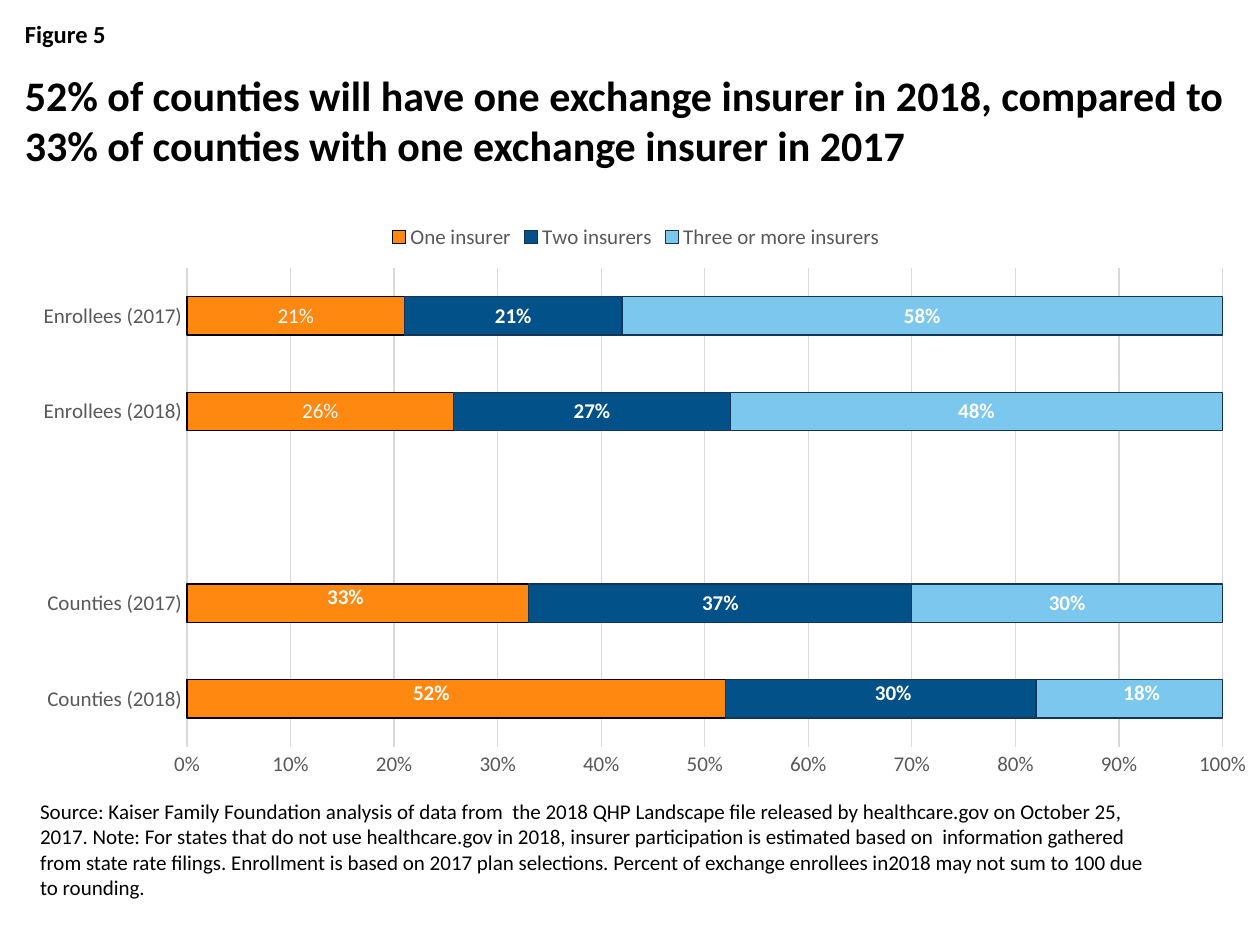
import pptx
import pptx.util
import pptx.chart.data
import pptx.dml.color
import pptx.enum.chart
import pptx.enum.text
import pptx.oxml

Cm, Pt = pptx.util.Cm, pptx.util.Pt
Color = pptx.dml.color.RGBColor
Anchor = pptx.enum.text.MSO_ANCHOR
Enum = pptx.enum.chart

BLACK = Color(0x00, 0x00, 0x00)
WHITE = Color(0xFF, 0xFF, 0xFF)
GRAY = Color(0x59, 0x59, 0x59)
GRID = Color(0xD9, 0xD9, 0xD9)
NAVY = Color(0x13, 0x35, 0x59)
ORANGE = Color(0xFF, 0x88, 0x11)
BLUE = Color(0x02, 0x51, 0x89)
SKY = Color(0x7B, 0xC7, 0xED)
FACE = "Calibri"

LABEL = "Figure 5"
TITLE = ("52% of counties will have one exchange insurer in 2018, compared to "
         "33% of counties with one exchange insurer in 2017")
SOURCE = ("Source: Kaiser Family Foundation analysis of data from  the 2018 QHP Landscape file "
          "released by healthcare.gov on October 25, 2017. Note: For states that do not use "
          "healthcare.gov in 2018, insurer participation is estimated based on  information "
          "gathered from state rate filings. Enrollment is based on 2017 plan selections. "
          "Percent of exchange enrollees in2018 may not sum to 100 due to rounding.")
GROUPS = ["Counties (2018)", "Counties (2017)", "", "Enrollees (2018)", "Enrollees (2017)"]
SERIES = [
    ("One insurer", [0.52, 0.33, None, 0.26, 0.21], ORANGE, BLACK),
    ("Two insurers", [0.30, 0.37, None, 0.27, 0.21], BLUE, NAVY),
    ("Three or more insurers", [0.18, 0.30, None, 0.48, 0.58], SKY, NAVY),
]
LIGHT = [(0, 3), (0, 4)]
SHIFTS = {(0, 0): (-0.02, -0.01), (0, 1): (-0.01, -0.01),
          (1, 0): (0.01, -0.01), (2, 0): (0.01, -0.01)}
PLOT = {"x": 0.14, "y": 0.1, "w": 0.83, "h": 0.83}


def style(font, size=12, color=GRAY, bold=False):
    font.name, font.size, font.bold = FACE, Pt(size), bold
    font.color.rgb = color


def write(slide, text, area, size=12, bold=False, anchor=Anchor.TOP):
    frame = slide.shapes.add_textbox(*map(Cm, area)).text_frame
    frame.word_wrap = True
    frame.vertical_anchor = anchor
    run = frame.paragraphs[0].add_run()
    run.text = text
    style(run.font, size, BLACK, bold)


def layout(places, inner=False):
    target = '<c:layoutTarget val="inner"/>' if inner else ""
    modes = "".join(f'<c:{k}Mode val="edge"/>' for k in "xy") if inner else ""
    sizes = "".join(f'<c:{k} val="{v}"/>' for k, v in places.items())
    space = "http://schemas.openxmlformats.org/drawingml/2006/chart"
    return pptx.oxml.parse_xml(f'<c:layout xmlns:c="{space}"><c:manualLayout>'
                               f'{target}{modes}{sizes}</c:manualLayout></c:layout>')


def rule(line, color):
    line.color.rgb, line.width = color, Pt(0.75)


def add_bars(slide):
    data = pptx.chart.data.CategoryChartData(number_format="0%")
    data.categories = GROUPS
    for name, values, *_ in SERIES:
        data.add_series(name, values)
    chart = slide.shapes.add_chart(Enum.XL_CHART_TYPE.BAR_STACKED_100, Cm(0.25), Cm(4.24),
                                   Cm(25.15), Cm(11.63), data).chart
    style(chart.font, 10, BLACK)
    chart.has_title = False
    chart.has_legend = True
    chart.legend.position = Enum.XL_LEGEND_POSITION.TOP
    chart.legend.include_in_layout = False
    style(chart.legend.font)

    for axis in (chart.category_axis, chart.value_axis):
        axis.major_tick_mark = axis.minor_tick_mark = Enum.XL_TICK_MARK.NONE
        style(axis.tick_labels.font)
    rule(chart.category_axis.format.line, GRID)
    scale = chart.value_axis
    scale.format.line.fill.background()
    scale.minimum_scale, scale.maximum_scale, scale.major_unit = 0, 1, 0.1
    scale.tick_labels.number_format = "0%"
    scale.tick_labels.number_format_is_linked = False
    rule(scale.major_gridlines.format.line, GRID)

    plot = chart.plots[0]
    plot.gap_width, plot.overlap, plot.vary_by_categories = 150, 100, False
    for row, (bars, (_, _, fill, edge)) in enumerate(zip(plot.series, SERIES)):
        bars.format.fill.solid()
        bars.format.fill.fore_color.rgb = fill
        rule(bars.format.line, edge)
        tags = bars.data_labels
        tags.show_value = True
        tags.number_format, tags.number_format_is_linked = "0%", False
        tags.position = Enum.XL_LABEL_POSITION.CENTER
        style(tags.font, color=WHITE, bold=True)
        for spot in range(len(GROUPS)):
            if (row, spot) in LIGHT or (row, spot) in SHIFTS:
                tag = bars.points[spot].data_label
                tag.position = Enum.XL_LABEL_POSITION.CENTER
                style(tag.font, color=WHITE, bold=(row, spot) not in LIGHT)
            if (row, spot) in SHIFTS:
                node = tags._element.xpath(f"c:dLbl[c:idx/@val={spot}]")[0]
                node.insert(1, layout(dict(zip("xy", SHIFTS[row, spot]))))

    area = chart._chartSpace.chart.plotArea
    for old in area.xpath("c:layout"):
        area.remove(old)
    area.insert(0, layout(PLOT, inner=True))


def main():
    deck = pptx.Presentation()
    deck.slide_width, deck.slide_height = Cm(25.4), Cm(19.05)
    slide = deck.slides.add_slide(deck.slide_layouts[6])
    write(slide, LABEL, (0.25, 0.25, 24.9, 0.86), size=14, bold=True)
    add_bars(slide)
    write(slide, SOURCE, (0.56, 16.3, 22.8, 1.96), anchor=Anchor.BOTTOM)
    write(slide, TITLE, (0.25, 1.27, 24.9, 2.54), size=24, bold=True)
    deck.save("out.pptx")


if __name__ == "__main__":
    main()
